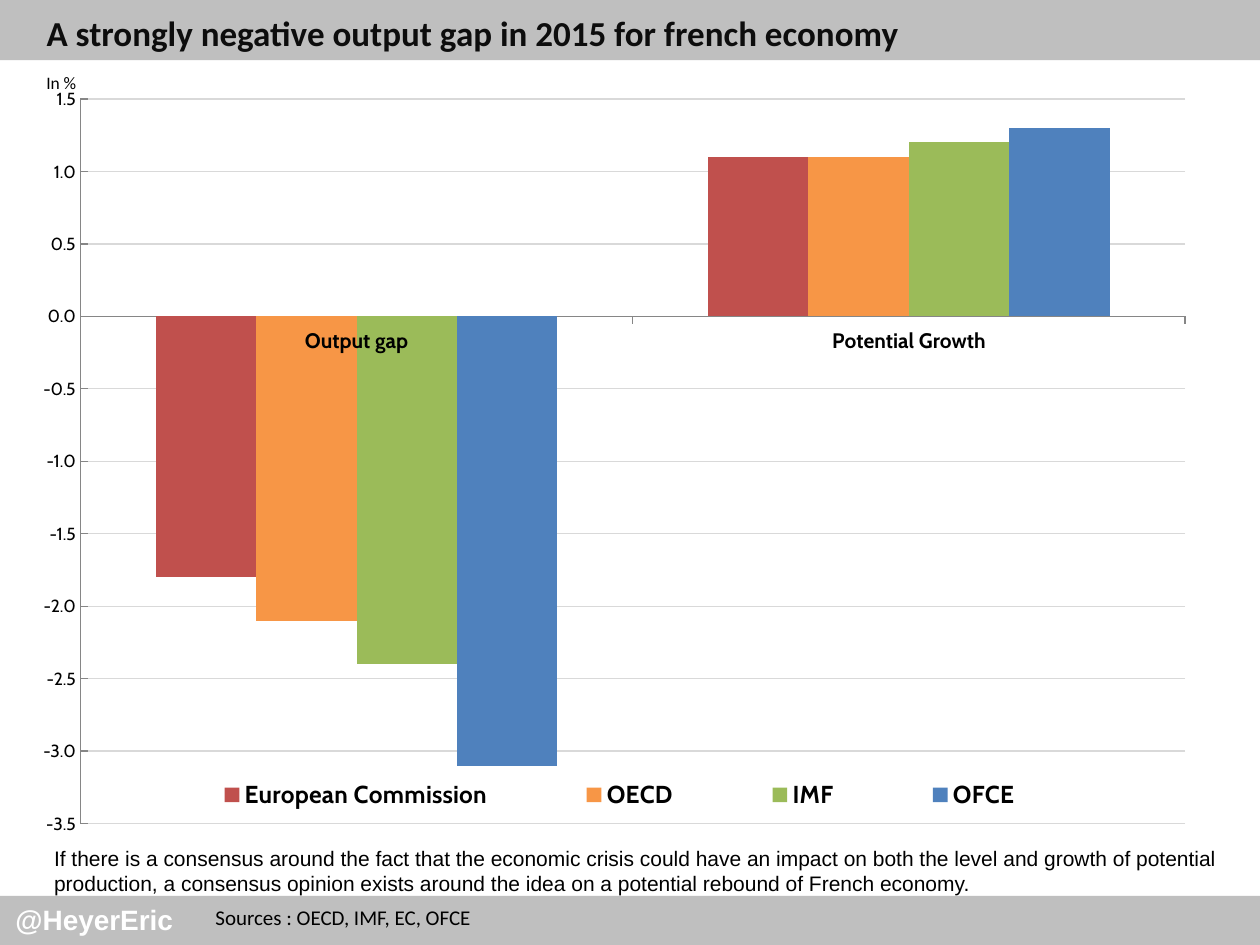
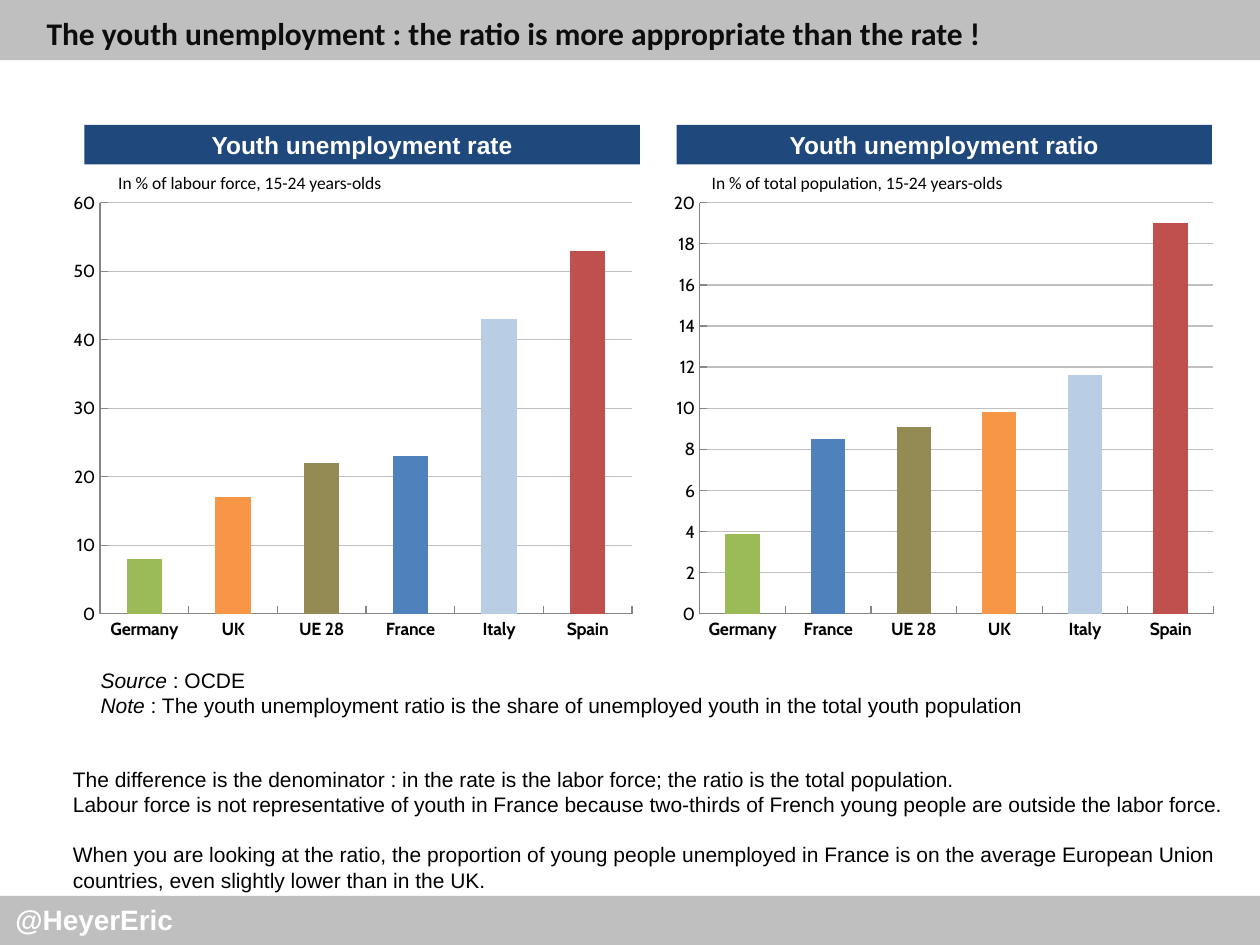
from lxml.etree import SubElement
from pptx import Presentation
from pptx.chart.data import CategoryChartData
from pptx.dml.color import RGBColor
from pptx.enum.chart import XL_CHART_TYPE, XL_LEGEND_POSITION, XL_TICK_MARK
from pptx.enum.shapes import MSO_SHAPE
from pptx.enum.text import MSO_ANCHOR, MSO_AUTO_SIZE, PP_ALIGN
from pptx.oxml.ns import qn
from pptx.util import Pt

COLORS = {
    "band": "BFBFBF", "banner": "1F497D", "title": "0D0D0D", "black": "000000",
    "white": "FFFFFF", "axis": "868686", "light_grid": "D9D9D9", "red": "C0504D",
    "orange": "F79646", "green": "9BBB59", "blue": "4F81BD", "olive": "948A54",
    "pale": "B9CDE5",
}
COUNTRY_COLORS = {"Germany": "green", "UK": "orange", "UE 28": "olive",
                  "France": "blue", "Italy": "pale", "Spain": "red"}


def rgb(name):
    return RGBColor.from_string(COLORS[name])


def set_font(font, size, color="black", name="Arial", bold=False, italic=False):
    font.size, font.name, font.bold, font.italic = Pt(size), name, bold, italic
    font.color.rgb = rgb(color)


def write(tf, *paragraphs, align=PP_ALIGN.LEFT, gaps=None, **font):
    """Fill a text frame; a paragraph is a string or an (italic label, rest) pair."""
    for i, content in enumerate(paragraphs):
        p = tf.paragraphs[0] if i == 0 else tf.add_paragraph()
        p.alignment = align
        if gaps and i in gaps:
            p.space_before = Pt(gaps[i])
        label, rest = ("", content) if isinstance(content, str) else content
        for text, italic in ((label, True), (rest, False)):
            if text:
                r = p.add_run()
                r.text = text
                set_font(r.font, italic=italic, **font)


def place(parent, index, box, inner=False):
    """Give a plot area or legend a fixed box, in fractions of the chart."""
    for old in parent.findall(qn("c:layout")):
        parent.remove(old)
    layout = parent.makeelement(qn("c:layout"))
    parent.insert(index, layout)
    manual = SubElement(layout, qn("c:manualLayout"))
    settings = [("layoutTarget", "inner")] if inner else []
    settings += [("xMode", "edge"), ("yMode", "edge"), *zip("xywh", box)]
    for tag, value in settings:
        SubElement(manual, qn(f"c:{tag}")).set("val", str(value))


class Deck:
    """Holds the shared style and the current slide."""

    def __init__(self):
        self.prs = Presentation()
        self.prs.slide_width, self.prs.slide_height = Pt(720), Pt(540)

    def slide(self, title, size):
        self.s = self.prs.slides.add_slide(self.prs.slide_layouts[5])
        sp = self.s.shapes.title
        sp.left, sp.top, sp.width, sp.height = Pt(19.4), Pt(0), Pt(686), Pt(37.4)
        tf = sp.text_frame
        tf.auto_size, tf.vertical_anchor = MSO_AUTO_SIZE.NONE, MSO_ANCHOR.MIDDLE
        write(tf, title, size=size, color="title", name="Calibri", bold=True)
        for top, height in ((0, 34.4), (512, 28)):
            sp.element.addprevious(self.rect(0, top, 720, height, "band").element)
        self.text(0, 512, 106, 26.6, "@HeyerEric", wrap=False, align=PP_ALIGN.RIGHT,
                  size=16, color="white", bold=True)

    def rect(self, left, top, width, height, fill):
        sp = self.s.shapes.add_shape(MSO_SHAPE.RECTANGLE, Pt(left), Pt(top),
                                     Pt(width), Pt(height))
        sp.shadow.inherit = False
        sp.fill.solid()
        sp.fill.fore_color.rgb = rgb(fill)
        sp.line.fill.background()
        return sp

    def banner(self, left, width, text):
        tf = self.rect(left, 71.4, width, 22.6, "banner").text_frame
        tf.vertical_anchor = MSO_ANCHOR.MIDDLE
        write(tf, text, align=PP_ALIGN.CENTER, size=14, color="white", bold=True)

    def text(self, left, top, width, height, *paragraphs, wrap=True, **style):
        sp = self.s.shapes.add_textbox(Pt(left), Pt(top), Pt(width), Pt(height))
        sp.text_frame.word_wrap = wrap
        write(sp.text_frame, *paragraphs, **style)

    def chart(self, left, top, width, height, cats, series, plot, scale, fmt="0",
              grid="band", cat_size=10, cat_tick=XL_TICK_MARK.INSIDE):
        data = CategoryChartData(number_format="General")
        data.categories = cats
        for name, values in series:
            data.add_series(name, values)
        chart = self.s.shapes.add_chart(
            XL_CHART_TYPE.COLUMN_CLUSTERED, Pt(left), Pt(top), Pt(width), Pt(height),
            data).chart
        chart.has_title = chart.has_legend = False
        set_font(chart.font, 10, name="Cabin")
        chart.plots[0].gap_width = 150
        chart.plots[0].overlap = 0
        chart.plots[0].vary_by_categories = False
        for axis in (chart.category_axis, chart.value_axis):
            axis.format.line.color.rgb = rgb("axis")
            axis.format.line.width = Pt(0.75)
            axis.minor_tick_mark = XL_TICK_MARK.NONE
        chart.category_axis.major_tick_mark = cat_tick
        set_font(chart.category_axis.tick_labels.font, cat_size, name="Cabin", bold=True)
        axis = chart.value_axis
        axis.major_tick_mark = XL_TICK_MARK.INSIDE
        axis.minimum_scale, axis.maximum_scale, axis.major_unit = scale
        axis.tick_labels.number_format = fmt
        axis.tick_labels.number_format_is_linked = False
        axis.major_gridlines.format.line.color.rgb = rgb(grid)
        axis.major_gridlines.format.line.width = Pt(0.75)
        place(chart.element.find(".//" + qn("c:plotArea")), 0, plot, inner=True)
        return chart

    def fill(self, item, color):
        item.format.fill.solid()
        item.format.fill.fore_color.rgb = rgb(color)

    def legend(self, chart, box):
        chart.has_legend = True
        chart.legend.position = XL_LEGEND_POSITION.BOTTOM
        chart.legend.include_in_layout = False
        set_font(chart.legend.font, 14, name="Cabin", bold=True)
        place(chart.legend.element if hasattr(chart.legend, "element")
              else chart.element.find(".//" + qn("c:legend")), 1, box)


def output_gap_slide(deck):
    deck.slide("A strongly negative output gap in 2015 for french economy", 20)
    deck.text(19.4, 37.4, 623.5, 19.4, "In %", size=10, name="Calibri")
    deck.text(116, 513.4, 181.4, 21.6, "Sources : OECD, IMF, EC, OFCE",
              size=12, name="Calibri")
    series = [("European Commission", (-1.8, 1.1)), ("OECD", (-2.1, 1.1)),
              ("IMF", (-2.4, 1.2)), ("OFCE", (-3.1, 1.3))]
    chart = deck.chart(14.4, 41.8, 686.2, 434.9, ["Output gap", "Potential Growth"],
                       series, (0.046, 0.034, 0.92, 0.954), (-3.5, 1.5, 0.5),
                       fmt="#,##0.0", grid="light_grid", cat_size=12,
                       cat_tick=XL_TICK_MARK.OUTSIDE)
    for bars, color in zip(chart.plots[0].series, ("red", "orange", "green", "blue")):
        bars.invert_if_negative = False
        deck.fill(bars, color)
    deck.legend(chart, (0.09, 0.92, 0.81, 0.06))
    deck.text(23.8, 479.5, 680.4, 55.4,
              "If there is a consensus around the fact that the economic crisis could "
              "have an impact on both the level and growth of potential production, a "
              "consensus opinion exists around the idea on a potential rebound of French "
              "economy.", size=12)


def youth_slide(deck):
    deck.slide("The youth unemployment : the ratio is more appropriate than the rate !", 18)
    panels = [
        ("rate", "labour force", (48.2, 317.5), (35.3, 332.6), 60.5, (0, 60, 10),
         {"Germany": 8, "UK": 17, "UE 28": 22, "France": 23, "Italy": 43, "Spain": 53}),
        ("ratio", "total population", (386.6, 306), (378.7, 321.1), 399.6, (0, 20, 2),
         {"Germany": 3.9, "France": 8.5, "UE 28": 9.1, "UK": 9.8, "Italy": 11.6,
          "Spain": 19}),
    ]
    for kind, base, banner, (left, width), unit_left, scale, values in panels:
        deck.banner(*banner, f"Youth unemployment {kind}")
        chart = deck.chart(left, 104.4, width, 266.4, list(values),
                           [("Series 1", list(values.values()))],
                           (0.066, 0.043, 0.914, 0.882), scale)
        bars = chart.plots[0].series[0]
        deck.fill(bars, "blue")
        for i, country in enumerate(values):
            deck.fill(bars.points[i], COUNTRY_COLORS[country])
        deck.text(unit_left, 95, 187.2, 19.4, f"In % of {base}, 15-24 years-olds",
                  size=10, name="Calibri")
    deck.text(50.4, 378, 561.6, 36, ("Source", " : OCDE"),
              ("Note", " : The youth unemployment ratio is the share of unemployed "
               "youth in the total youth population"), size=12)
    deck.text(34.6, 434.2, 676.8, 99.4,
              "The difference is the denominator : in the rate is the labor force; "
              "the ratio is the total population.",
              "Labour force is not representative of youth in France because two-thirds "
              "of French young people are outside the labor force.",
              "When you are looking at the ratio, the proportion of young people "
              "unemployed in France is on the average European Union countries, even "
              "slightly lower than in the UK.", gaps={2: 14.5}, size=12)


def main():
    deck = Deck()
    output_gap_slide(deck)
    youth_slide(deck)
    deck.prs.save("out.pptx")


if __name__ == "__main__":
    main()
